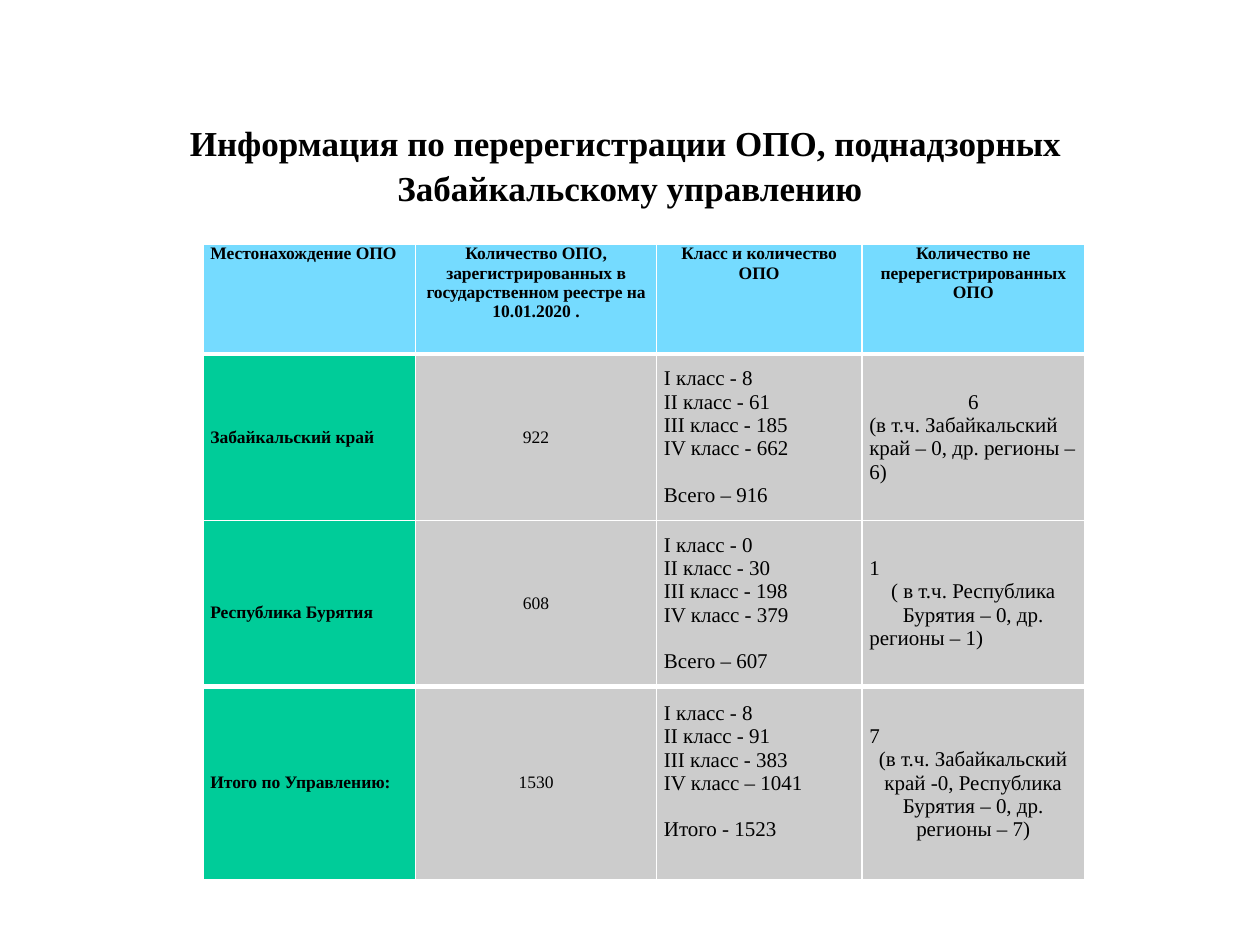
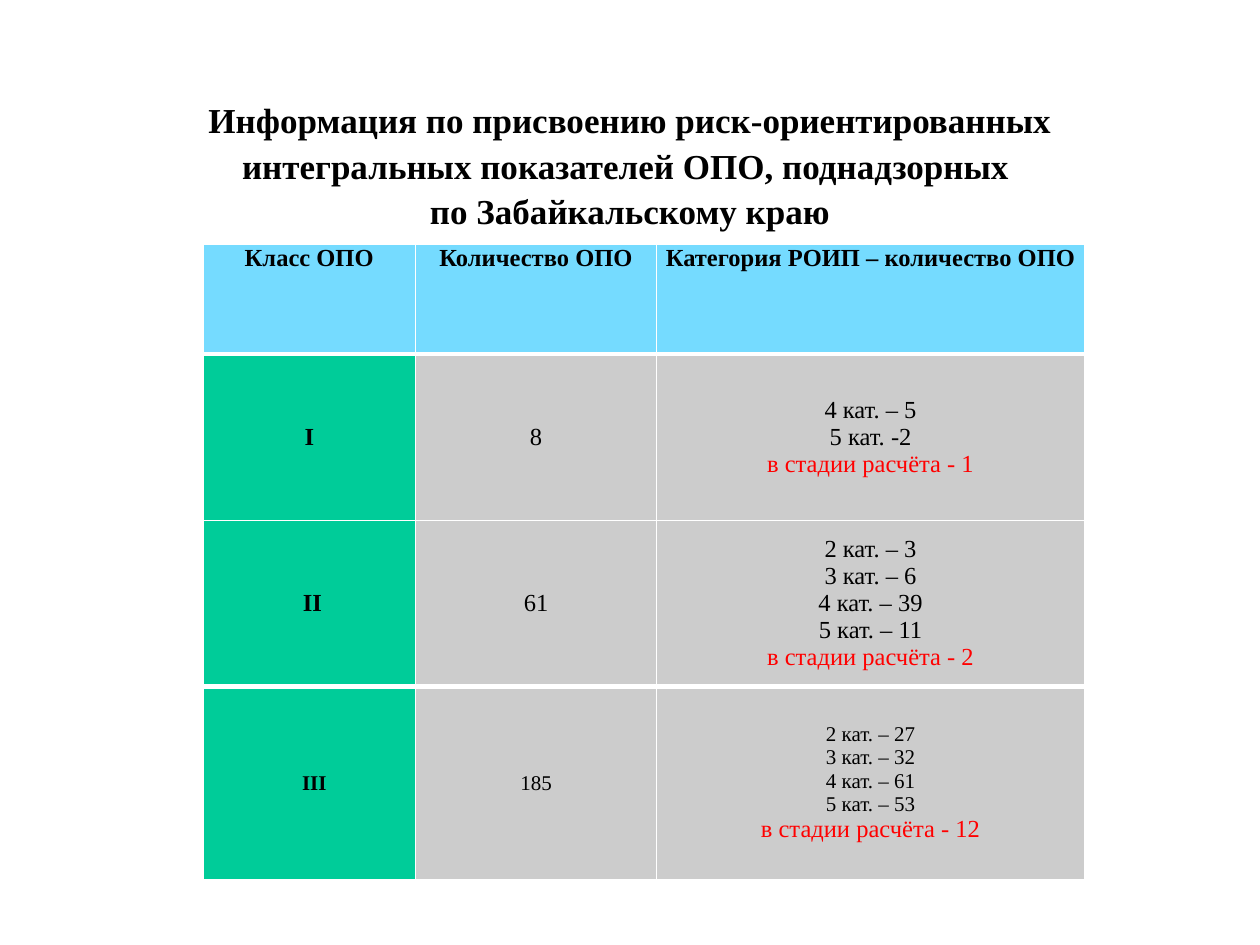
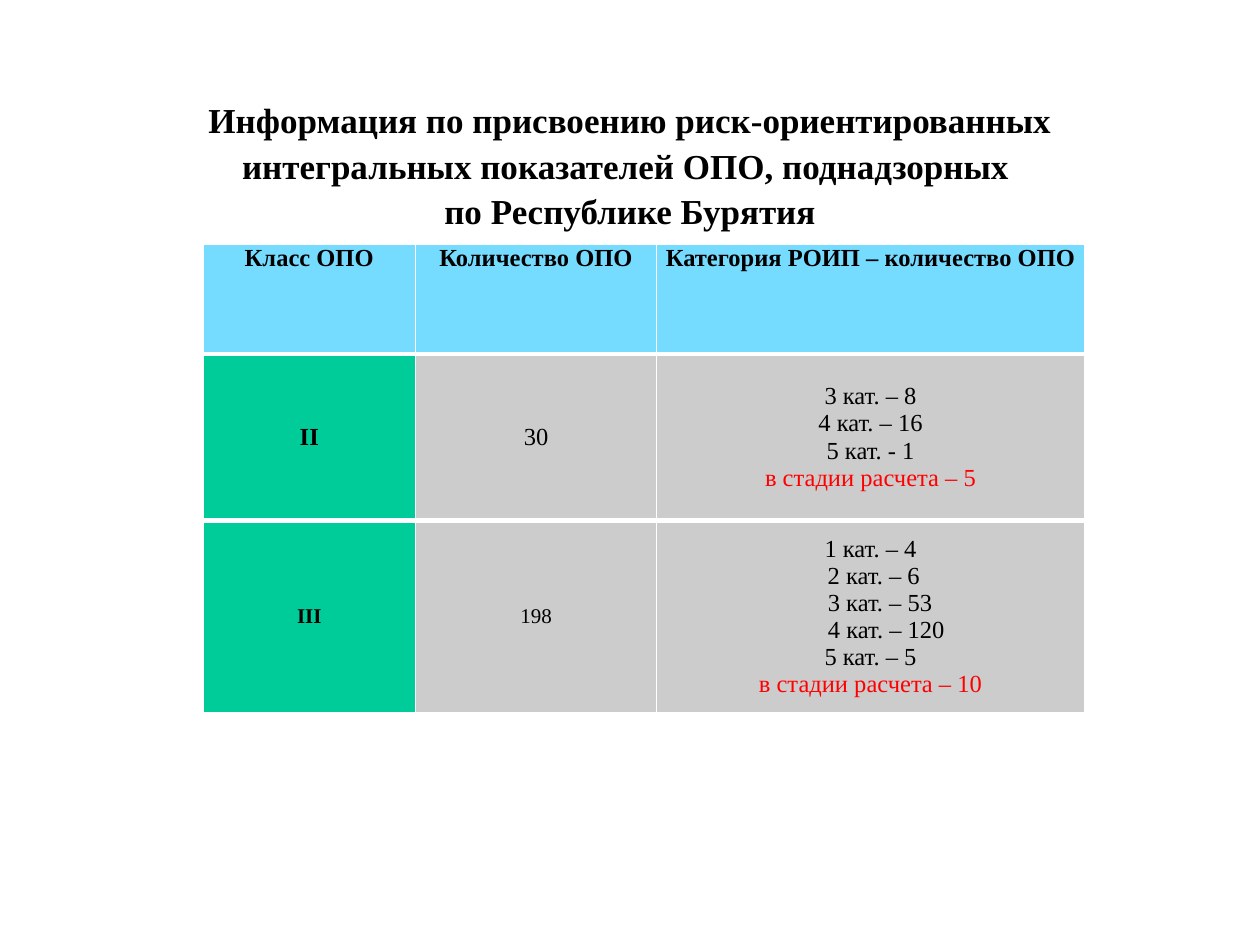
from dataclasses import dataclass

from lxml import etree
from pptx import Presentation
from pptx.dml.color import RGBColor
from pptx.enum.text import MSO_ANCHOR, PP_ALIGN
from pptx.oxml.ns import qn
from pptx.util import Inches, Pt

LEFT, CENTER = PP_ALIGN.LEFT, PP_ALIGN.CENTER
TOP, MIDDLE = MSO_ANCHOR.TOP, MSO_ANCHOR.MIDDLE

BLACK = RGBColor(0x00, 0x00, 0x00)
RED = RGBColor(0xFF, 0x00, 0x00)
WHITE = RGBColor(0xFF, 0xFF, 0xFF)
HEADER_BLUE = RGBColor(0x75, 0xDB, 0xFF)
LABEL_GREEN = RGBColor(0x00, 0xCC, 0x99)
VALUE_GRAY = RGBColor(0xCC, 0xCC, 0xCC)

FONT = "Times New Roman"
NO_STYLE = "{2D5ABB26-0587-4C30-8999-92F81FD0307C}"
THIN, THICK = Pt(1), Pt(3)

TABLE_LEFT, TABLE_TOP = 1.61, 1.94
HEADER_ROW, BODY_ROW, LAST_ROW = 0.87, 1.32, 1.53
REGISTER_COLS = (1.69, 1.91, 1.63, 1.77)
RISK_COLS = (1.69, 1.91, 3.4)

RISK_TITLE = ("Информация по присвоению риск-ориентированных "
              "интегральных показателей ОПО, поднадзорных \n")


@dataclass
class Line:
    text: str
    size: int = 14
    align: PP_ALIGN = CENTER
    color: RGBColor = BLACK
    indent: float = 0
    before: float = 0


def lines(text, **style):
    return [Line(part, **style) for part in text.split("\n")]


def small(text, align=CENTER):
    return lines(text, size=10, align=align)


def classes(text, total):
    return (lines(text, size=12, align=LEFT)
            + [Line(total, size=12, align=LEFT, before=13.3)])


def categories(text, pending, size=14):
    return lines(text, size=size) + [Line(pending, color=RED)]


def set_font(p, size, bold, color=BLACK):
    p.font.name = FONT
    p.font.size = Pt(size)
    p.font.bold = bold
    p.font.color.rgb = color


def add_title(slide, text):
    box = slide.shapes.add_textbox(Inches(0.75), Inches(0.67), Inches(8.5), Inches(1.25))
    tf = box.text_frame
    tf.word_wrap = True
    tf.vertical_anchor = MIDDLE
    p = tf.paragraphs[0]
    p.text = text
    p.alignment = CENTER
    p.line_spacing = 1.09
    set_font(p, 20, True)


def set_borders(cell, top, bottom):
    tc_pr = cell._tc.get_or_add_tcPr()
    widths = (("a:lnL", THIN), ("a:lnR", THIN), ("a:lnT", top), ("a:lnB", bottom))
    for i, (tag, width) in enumerate(widths):
        ln = etree.Element(qn(tag), w=str(width))
        fill = etree.SubElement(ln, qn("a:solidFill"))
        etree.SubElement(fill, qn("a:srgbClr"), val=str(WHITE))
        tc_pr.insert(i, ln)


def fill_cell(cell, content, fill, bold, anchor):
    cell.fill.solid()
    cell.fill.fore_color.rgb = fill
    cell.vertical_anchor = anchor
    cell.margin_left = cell.margin_right = Inches(0.06)
    cell.margin_top = cell.margin_bottom = 0
    tf = cell.text_frame
    for i, line in enumerate(content):
        p = tf.add_paragraph() if i else tf.paragraphs[0]
        p.text = line.text
        p.alignment = line.align
        set_font(p, line.size, bold, line.color)
        if line.before:
            p.space_before = Pt(line.before)
        if line.indent:
            p._p.get_or_add_pPr().set("marL", str(Inches(line.indent)))


def add_grid(slide, col_widths, rows):
    heights = [HEADER_ROW] + [BODY_ROW] * (len(rows) - 2) + [LAST_ROW]
    frame = slide.shapes.add_table(
        len(rows), len(col_widths), Inches(TABLE_LEFT), Inches(TABLE_TOP),
        Inches(sum(col_widths)), Inches(sum(heights)))
    table = frame.table
    table.horz_banding = False
    table._tbl.tblPr.find(qn("a:tableStyleId")).text = NO_STYLE
    for column, width in zip(table.columns, col_widths):
        column.width = Inches(width)
    for row, height in zip(table.rows, heights):
        row.height = Inches(height)
    last = len(rows) - 1
    for r, row in enumerate(rows):
        for c, content in enumerate(row):
            cell = table.cell(r, c)
            fill = HEADER_BLUE if r == 0 else LABEL_GREEN if c == 0 else VALUE_GRAY
            fill_cell(cell, content, fill, r == 0 or c == 0, MIDDLE if r else TOP)
            set_borders(cell, THICK if r in (1, last) else THIN,
                        THICK if r in (0, last - 1) else THIN)
    return table


def add_slide(prs, title, col_widths, rows):
    slide = prs.slides.add_slide(prs.slide_layouts[6])
    add_title(slide, title)
    return add_grid(slide, col_widths, rows)


def add_register_slide(prs):
    rows = [
        [small("Местонахождение ОПО", LEFT),
         small("Количество ОПО, зарегистрированных в государственном реестре на 10.01.2020 ."),
         small("Класс и количество ОПО"),
         small("Количество не перерегистрированных\nОПО")],
        [small("Забайкальский край", LEFT),
         small("922"),
         classes("I класс - 8\nII класс - 61\nIII класс - 185\nIV класс - 662", "Всего – 916"),
         [Line("6", 12),
          Line("(в т.ч. Забайкальский край – 0, др. регионы – 6)", 12, LEFT)]],
        [small("Республика Бурятия", LEFT),
         small("608"),
         classes("I класс - 0\nII класс - 30\nIII класс - 198\nIV класс - 379", "Всего – 607"),
         [Line("1", 12, LEFT),
          Line("( в т.ч. Республика Бурятия – 0, др.", 12),
          Line("регионы – 1)", 12, LEFT)]],
        [small("Итого по Управлению:", LEFT),
         small("1530"),
         classes("I класс - 8\nII класс - 91\nIII класс - 383\nIV класс – 1041", "Итого - 1523"),
         [Line("7", 12, LEFT),
          Line("(в т.ч. Забайкальский край -0, Республика Бурятия – 0, др. регионы – 7)", 12)]],
    ]
    table = add_slide(
        prs, "Информация по перерегистрации ОПО, поднадзорных \nЗабайкальскому управлению",
        REGISTER_COLS, rows)
    table.cell(2, 0).margin_top = Inches(0.15)
    table.cell(3, 2).margin_bottom = Inches(0.18)


def add_risk_slide(prs, territory, rows):
    header = [lines("Класс ОПО"), lines("Количество ОПО"),
              lines("Категория РОИП – количество ОПО")]
    add_slide(prs, RISK_TITLE + territory, RISK_COLS, [header] + rows)


def main():
    prs = Presentation()
    prs.slide_width, prs.slide_height = Inches(10), Inches(7.5)
    add_register_slide(prs)
    add_risk_slide(prs, "по Забайкальскому краю", [
        [lines("I"), lines("8"),
         categories("4 кат. – 5\n5 кат. -2", "в стадии расчёта - 1")],
        [lines("II", indent=0.05), lines("61"),
         categories("2 кат. – 3\n3 кат. – 6\n4 кат. – 39\n5 кат. – 11", "в стадии расчёта - 2")],
        [lines("III", size=12, indent=0.08), lines("185", size=12),
         categories("2 кат. – 27\n3 кат. – 32\n4 кат. – 61\n5 кат. – 53",
                    "в стадии расчёта - 12", size=12)],
    ])
    add_risk_slide(prs, "по Республике Бурятия", [
        [lines("II"), lines("30"),
         categories("3 кат. – 8\n4 кат. – 16\n5 кат. - 1", "в стадии расчета – 5")],
        [lines("III", size=12), lines("198", size=12),
         [Line("1 кат. – 4"),
          Line("2 кат. – 6", indent=0.05),
          Line("3 кат. – 53", indent=0.15),
          Line("4 кат. – 120", indent=0.25)]
         + categories("5 кат. – 5", "в стадии расчета – 10")],
    ])
    prs.save("out.pptx")


if __name__ == "__main__":
    main()
